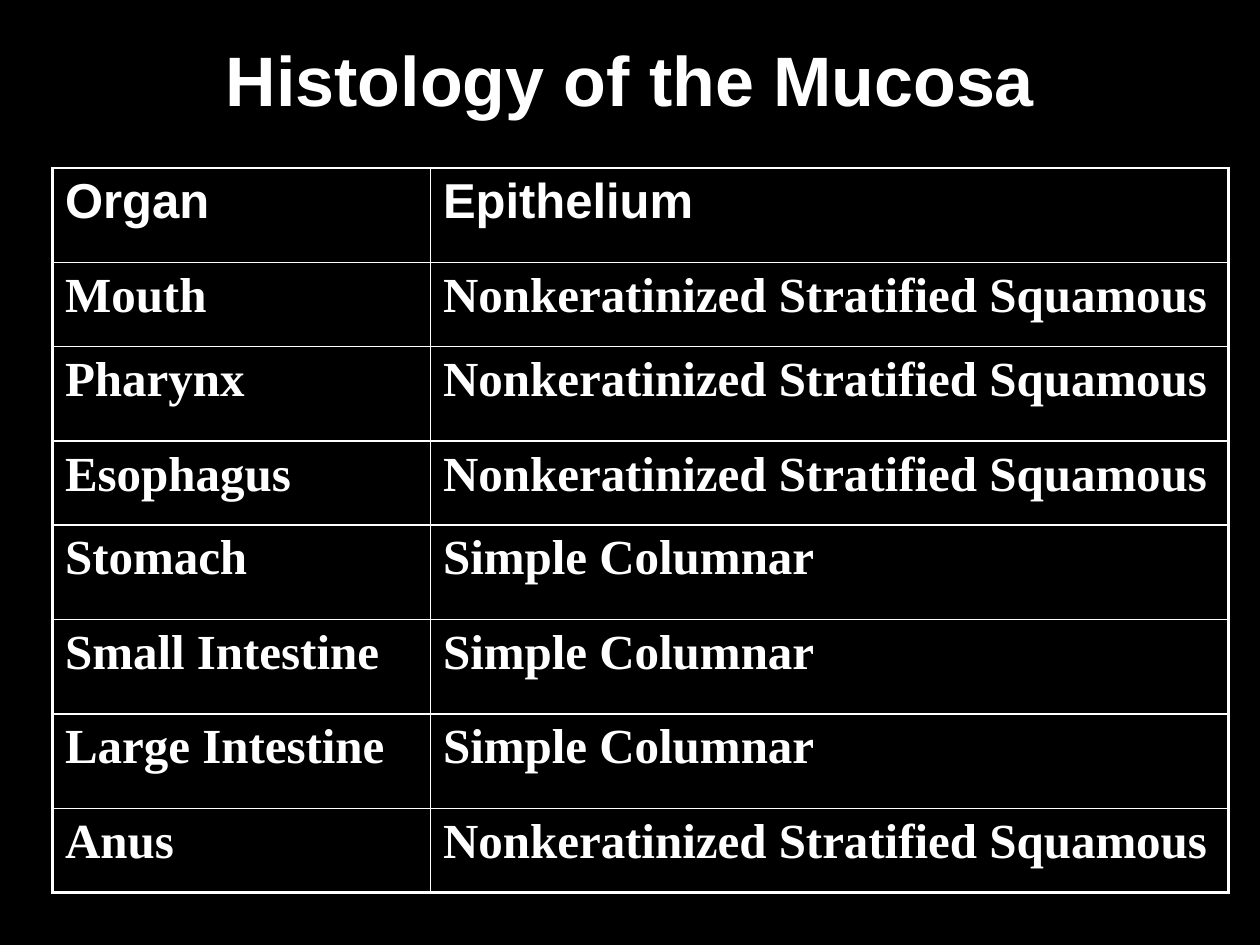
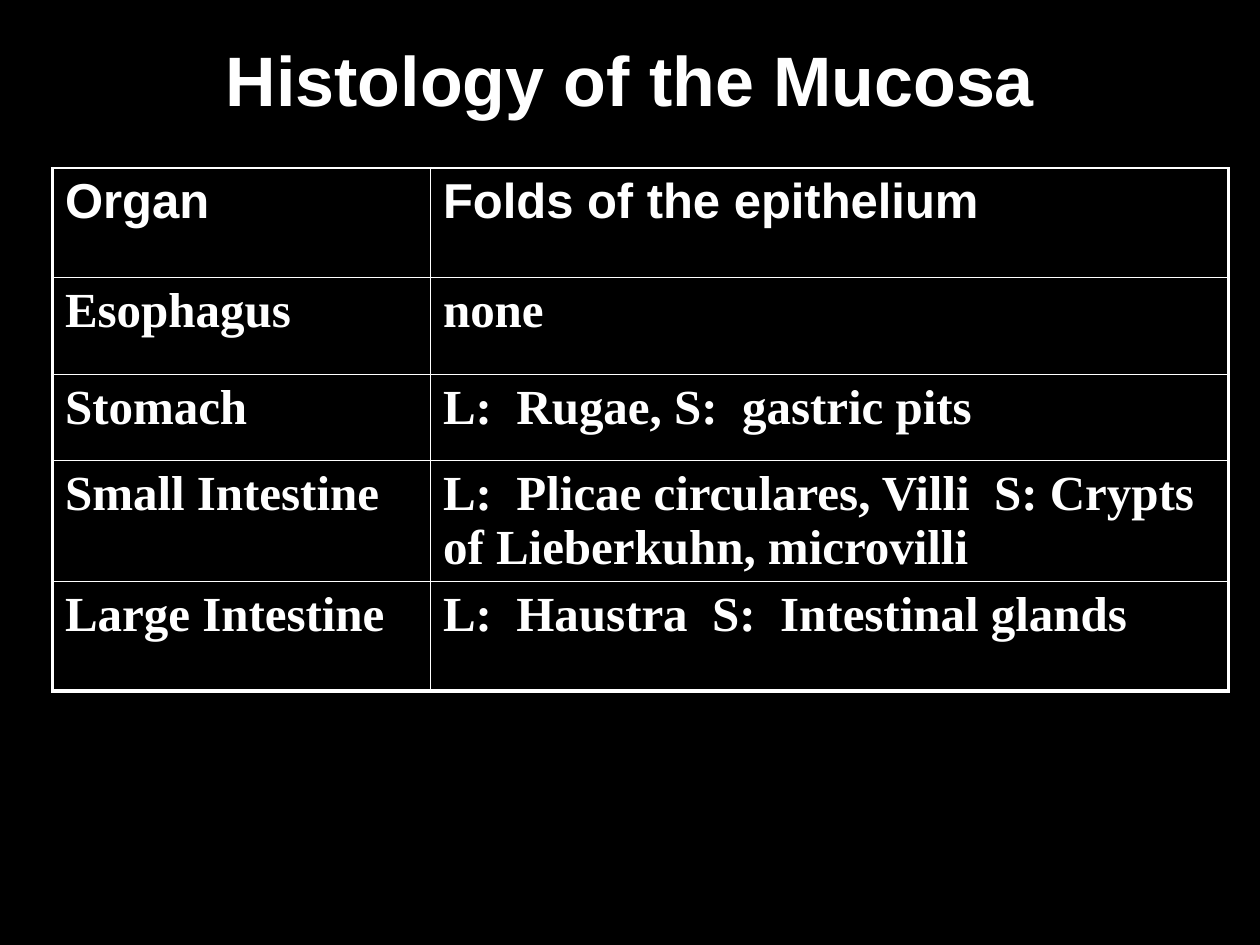
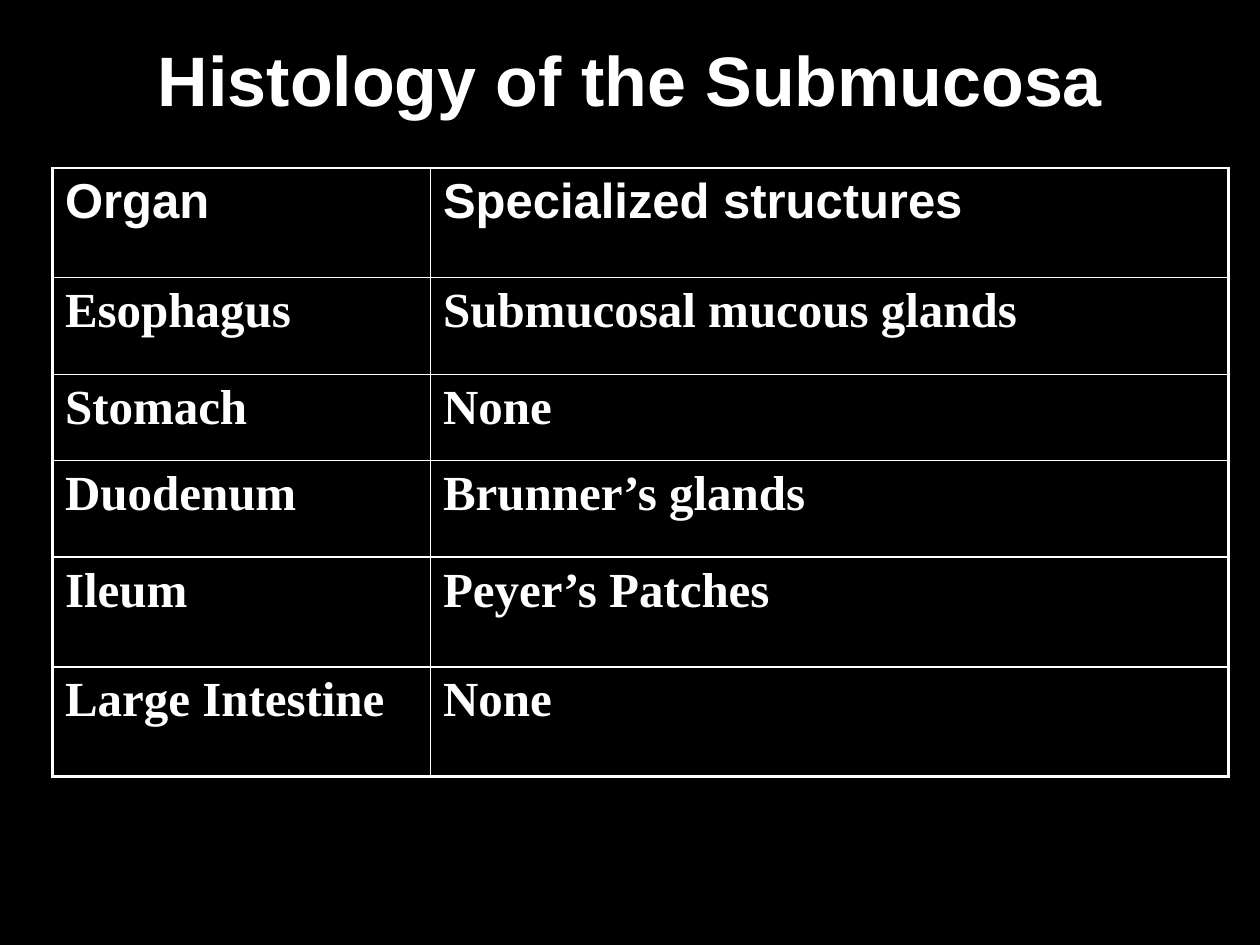
"""Build three slides of histology tables on a black background."""
from lxml.etree import SubElement
from pptx import Presentation
from pptx.dml.color import RGBColor
from pptx.enum.text import MSO_ANCHOR, PP_ALIGN
from pptx.oxml import parse_xml
from pptx.oxml.ns import nsdecls, qn
from pptx.util import Inches, Pt

BLACK, WHITE = "000000", "FFFFFF"
HEAD_FONT, BODY_FONT = "Arial", "Times New Roman"
TITLE_SIZE, CELL_SIZE = 40, 28
THIN, THICK = 1, 2.25
WIDTH, HEIGHT = 10, 7.5
TITLE_BOX = {"left": 0, "top": HEIGHT / 30, "width": WIDTH, "height": HEIGHT / 10}
TABLE_LEFT, TABLE_TOP = WIDTH / 24, HEIGHT * 8 / 45
COLUMNS = (3, 19 / 3)
LOW, TALL = 2 / 3, 3 / 4
SQUAMOUS = "Nonkeratinized Stratified Squamous"
COLUMNAR = "Simple Columnar"

SLIDES = [
    ("Histology of the Mucosa", BLACK, [
        (TALL, "Organ", "Epithelium"),
        (LOW, "Mouth", SQUAMOUS),
        (TALL, "Pharynx", SQUAMOUS),
        (LOW, "Esophagus", SQUAMOUS),
        (TALL, "Stomach", COLUMNAR),
        (TALL, "Small Intestine", COLUMNAR),
        (TALL, "Large Intestine", COLUMNAR),
        (LOW, "Anus", SQUAMOUS),
    ]),
    ("Histology of the Mucosa", None, [
        (0.87, "Organ", "Folds of the epithelium"),
        (0.77, "Esophagus", "none"),
        (0.68, "Stomach", "L:  Rugae, S:  gastric pits"),
        (0.77, "Small Intestine",
         "L:  Plicae circulares, Villi  S: Crypts of Lieberkuhn, microvilli"),
        (0.87, "Large Intestine", "L:  Haustra  S:  Intestinal glands"),
    ]),
    ("Histology of the Submucosa", None, [
        (0.87, "Organ", "Specialized structures"),
        (0.77, "Esophagus", "Submucosal mucous glands"),
        (0.68, "Stomach", "None"),
        (0.77, "Duodenum", "Brunner’s glands"),
        (0.87, "Ileum", "Peyer’s Patches"),
        (0.87, "Large Intestine", "None"),
    ]),
]


def rgb(value):
    return RGBColor.from_string(value)


def paint(fill, color):
    fill.solid()
    fill.fore_color.rgb = rgb(color)


def write(tf, text, font, size):
    p = tf.paragraphs[0]
    r = p.add_run()
    r.text = text
    for name, value in {"name": font, "size": Pt(size), "bold": True}.items():
        setattr(r.font, name, value)
    r.font.color.rgb = rgb(WHITE)
    return p


def set_space_before(p, percent):
    space = SubElement(p._p.get_or_add_pPr(), qn("a:spcBef"))
    SubElement(space, qn("a:spcPct"), val=str(percent * 1000))


def set_borders(cell, widths):
    tc_pr = cell._tc.get_or_add_tcPr()
    for i, (side, width) in enumerate(widths.items()):
        ln = parse_xml(f'<a:ln{side} {nsdecls("a")} w="{Pt(width)}"/>')
        fill = SubElement(ln, qn("a:solidFill"))
        SubElement(fill, qn("a:srgbClr"), val=WHITE)
        tc_pr.insert(i, ln)


def add_organ_table(s, rows):
    height = sum(row[0] for row in rows)
    box = (TABLE_LEFT, TABLE_TOP, sum(COLUMNS), height)
    table = s.shapes.add_table(len(rows), len(COLUMNS), *map(Inches, box)).table
    table.horz_banding = table.first_row = False
    for column, width in zip(table.columns, COLUMNS):
        column.width = Inches(width)
    for i, (height, *texts) in enumerate(rows):
        table.rows[i].height = Inches(height)
        for j, text in enumerate(texts):
            cell = table.cell(i, j)
            p = write(cell.text_frame, text, BODY_FONT if i else HEAD_FONT, CELL_SIZE)
            set_space_before(p, 20)
            paint(cell.fill, BLACK)
            set_borders(cell, {
                "L": THIN if j else THICK,
                "R": THICK if j == len(COLUMNS) - 1 else THIN,
                "T": THIN,
                "B": THICK if i == len(rows) - 1 else THIN,
            })


def add_slide(prs, title, title_fill, rows):
    s = prs.slides.add_slide(prs.slide_layouts.get_by_name("Title Only"))
    sp = s.shapes.title
    for name, value in TITLE_BOX.items():
        setattr(sp, name, Inches(value))
    if title_fill:
        paint(sp.fill, title_fill)
    sp.text_frame.vertical_anchor = MSO_ANCHOR.MIDDLE
    write(sp.text_frame, title, HEAD_FONT, TITLE_SIZE).alignment = PP_ALIGN.CENTER
    add_organ_table(s, rows)


def main():
    prs = Presentation()
    prs.slide_width, prs.slide_height = Inches(WIDTH), Inches(HEIGHT)
    paint(prs.slide_master.background.fill, BLACK)
    for title, title_fill, rows in SLIDES:
        add_slide(prs, title, title_fill, rows)
    prs.save("out.pptx")


if __name__ == "__main__":
    main()
